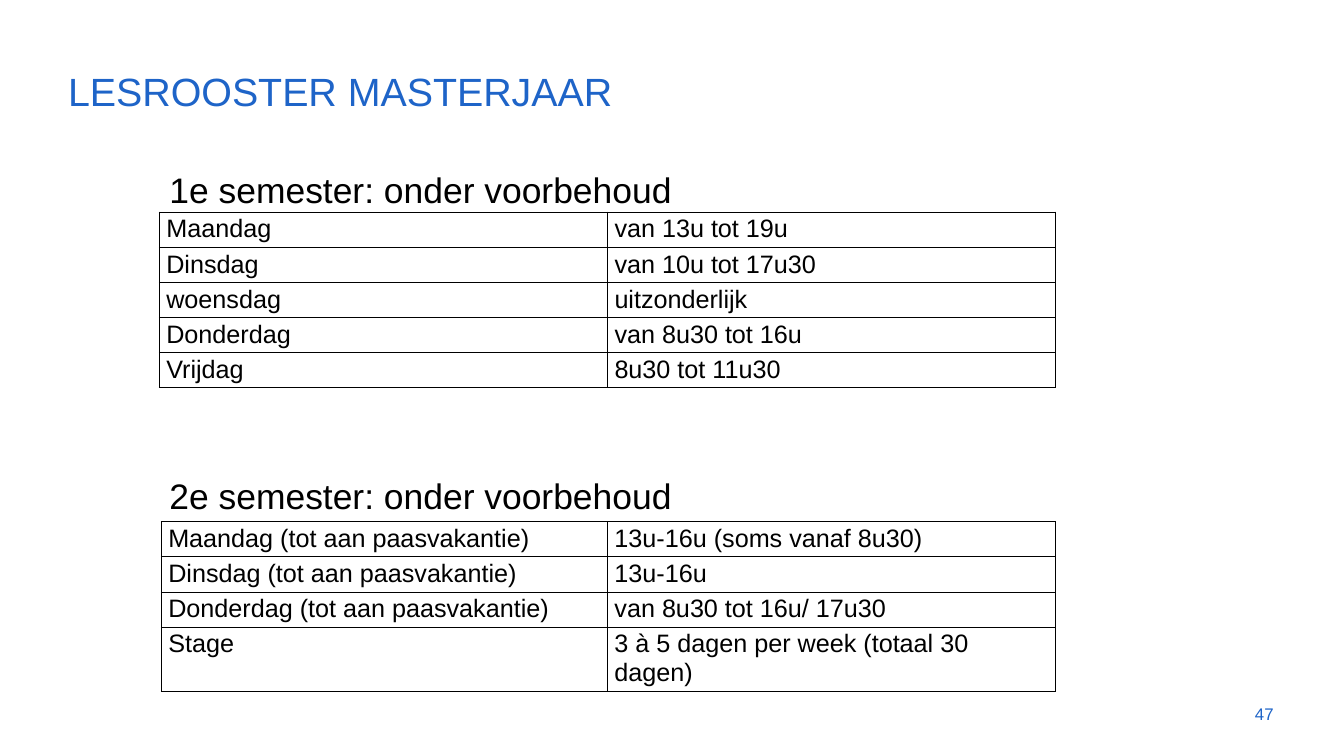
from lxml import etree
from pptx import Presentation
from pptx import util as u
from pptx.dml.color import RGBColor
from pptx.enum import text
from pptx.oxml import ns

BLUE = RGBColor(0x1E, 0x64, 0xC8)
BLACK = RGBColor(0, 0, 0)
FONT = "Arial"

ROW_HEIGHT = 1.26
COLUMN_SPLIT = 21.77
TABLE_RIGHT = 37.82

# heading, heading top, table left, table top, rows (lengths in cm)
SEMESTERS = [
    ("1e semester: onder voorbehoud", 6.02, 5.71, 7.6, [
        ("Maandag", "van 13u tot 19u"),
        ("Dinsdag", "van 10u tot 17u30"),
        ("woensdag", "uitzonderlijk"),
        ("Donderdag", "van 8u30 tot 16u"),
        ("Vrijdag", "8u30 tot 11u30"),
    ]),
    ("2e semester: onder voorbehoud", 16.98, 5.78, 18.7, [
        ("Maandag (tot aan paasvakantie)", "13u-16u (soms vanaf 8u30)"),
        ("Dinsdag (tot aan paasvakantie)", "13u-16u"),
        ("Donderdag (tot aan paasvakantie)", "van 8u30 tot 16u/ 17u30"),
        ("Stage", "3 à 5 dagen per week (totaal 30 dagen)"),
    ]),
]


def write(frame, wording, size, color, margin_x, margin_y):
    frame.word_wrap = True
    frame.auto_size = text.MSO_AUTO_SIZE.NONE
    frame.margin_left = frame.margin_right = u.Cm(margin_x)
    frame.margin_top = frame.margin_bottom = u.Cm(margin_y)
    paragraph = frame.paragraphs[0]
    run = paragraph.add_run()
    run.text = wording
    run.font.name = FONT
    run.font.size = u.Pt(size)
    run.font.color.rgb = color
    return paragraph


def fill_cell(cell, wording):
    cell.margin_left = cell.margin_right = u.Cm(0.25)
    cell.margin_top = cell.margin_bottom = u.Cm(0.11)
    run = cell.text_frame.paragraphs[0].add_run()
    run.text = wording
    run.font.name = FONT
    run.font.size = u.Pt(25.6)
    run.font.color.rgb = BLACK
    # Thin border on every side
    properties = cell._tc.get_or_add_tcPr()
    for side in ("a:lnL", "a:lnR", "a:lnT", "a:lnB"):
        border = etree.SubElement(properties, ns.qn(side), w=str(u.Pt(1)))
        solid = etree.SubElement(border, ns.qn("a:solidFill"))
        etree.SubElement(solid, ns.qn("a:srgbClr"), val=str(BLACK))
    cell.fill.background()


prs = Presentation()
prs.slide_width = u.Cm(48.16)
prs.slide_height = u.Cm(27.1)
slide = prs.slides.add_slide(prs.slide_layouts[5])

# Title
title = slide.shapes.title
title.left, title.top = u.Cm(2.26), u.Cm(1.83)
title.width, title.height = u.Cm(43.64), u.Cm(2.39)
title_line = write(title.text_frame, "LESROOSTER MASTERJAAR", 40, BLUE, 0.18, 0.1)
title.text_frame.vertical_anchor = text.MSO_ANCHOR.BOTTOM
title_line.alignment = text.PP_ALIGN.LEFT
title_line.line_spacing = 0.9

# Semester headings and timetables
for heading, heading_top, left, top, lessons in SEMESTERS:
    heading_box = slide.shapes.add_textbox(
        u.Cm(6.07), u.Cm(heading_top), u.Cm(31), u.Cm(1.5))
    write(heading_box.text_frame, heading, 36, BLACK, 0, 0)

    timetable = slide.shapes.add_table(
        len(lessons), 2, u.Cm(left), u.Cm(top),
        u.Cm(TABLE_RIGHT - left), u.Cm(ROW_HEIGHT * len(lessons))).table
    timetable.first_row = False
    timetable.horz_banding = False
    timetable.columns[0].width = u.Cm(COLUMN_SPLIT - left)
    timetable.columns[1].width = u.Cm(TABLE_RIGHT - COLUMN_SPLIT)
    for row, lesson in enumerate(lessons):
        timetable.rows[row].height = u.Cm(ROW_HEIGHT)
        for column, wording in enumerate(lesson):
            fill_cell(timetable.cell(row, column), wording)

# The internship row holds two lines
timetable.rows[len(lessons) - 1].height = u.Cm(2.29)

# Page number
page_number = slide.shapes.add_textbox(
    u.Cm(43.31), u.Cm(24.87), u.Cm(2.57), u.Cm(1.45))
number_line = write(page_number.text_frame, "47", 17.1, BLUE, 0.24, 0.1)
page_number.text_frame.vertical_anchor = text.MSO_ANCHOR.MIDDLE
number_line.alignment = text.PP_ALIGN.RIGHT

prs.save("out.pptx")
